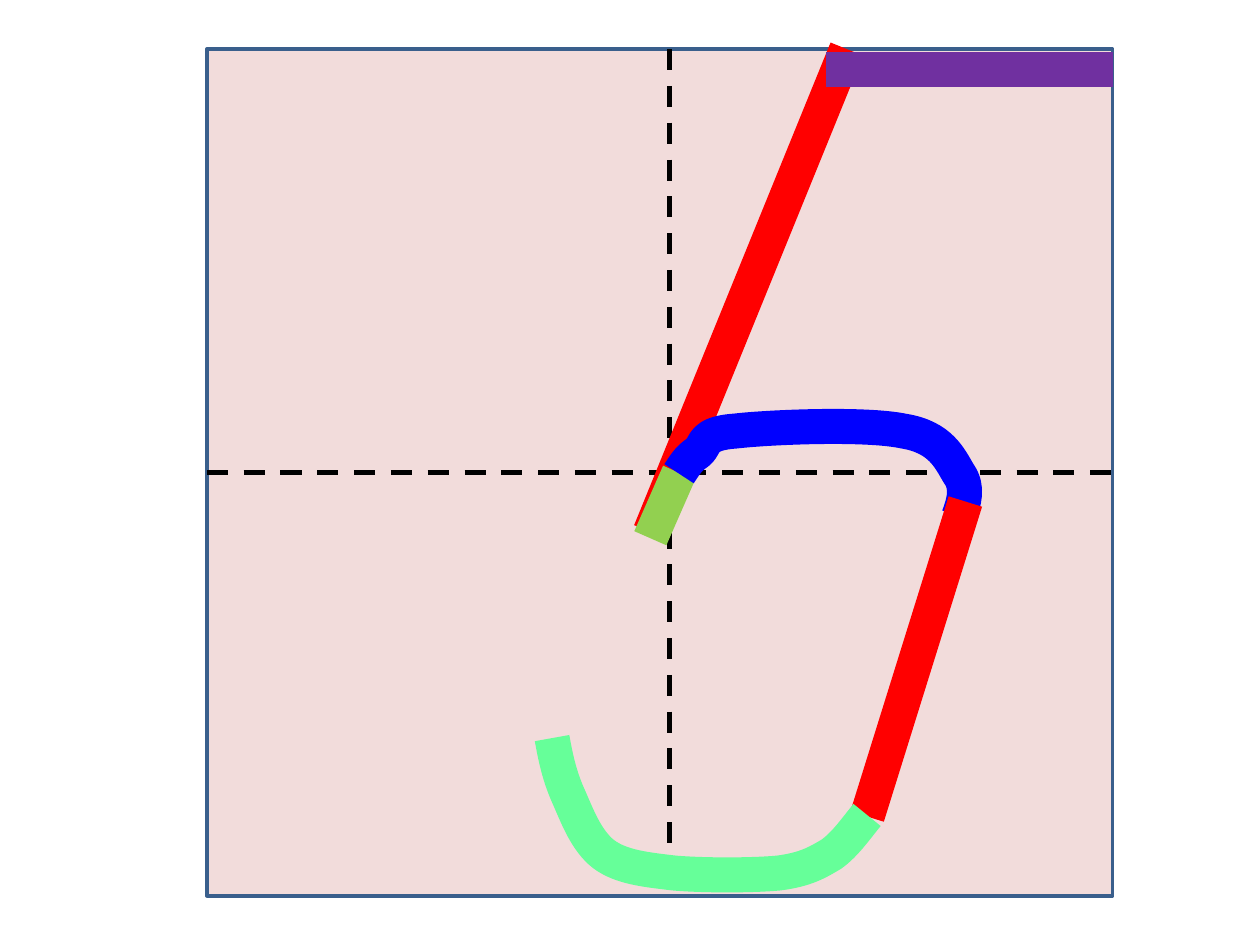
from lxml import etree
from pptx import Presentation
from pptx.dml.color import RGBColor
from pptx.enum.dml import MSO_LINE
from pptx.enum.shapes import MSO_CONNECTOR, MSO_SHAPE
from pptx.oxml.ns import qn
from pptx.util import Cm, Pt

STRAIGHT = MSO_CONNECTOR.STRAIGHT
RECT = MSO_SHAPE.RECTANGLE
DASH = MSO_LINE.DASH

COLORS = {
    "panel": "F2DCDB",
    "border": "3A5F8C",
    "guide": "000000",
    "slant": "FF0000",
    "retrace": "92D050",
    "bowl": "0000FF",
    "hook": "66FF99",
    "top": "7030A0",
}
STROKE = 20

# Start point, then two control points and an end point per curve (cm)
BOWL = [
    (13.69, 9.55),
    (13.79, 9.4), (13.87, 9.25), (14.07, 9.12),
    (14.25, 8.97), (14.12, 8.74), (14.83, 8.69),
    (15.52, 8.61), (17.45, 8.53), (18.21, 8.69),
    (18.97, 8.81), (19.15, 9.25), (19.33, 9.55),
    (19.53, 9.83), (19.43, 10.13), (19.33, 10.41),
]
HOOK = [
    (17.48, 16.43),
    (17.25, 16.71), (17.04, 17.02), (16.76, 17.22),
    (16.46, 17.4), (16.23, 17.53), (15.7, 17.6),
    (15.16, 17.65), (14.17, 17.65), (13.59, 17.6),
    (13, 17.53), (12.52, 17.48), (12.17, 17.22),
    (11.81, 16.94), (11.63, 16.43), (11.46, 16.05),
    (11.28, 15.65), (11.2, 15.27), (11.13, 14.88),
]


def style_line(shape, color, width):
    shape.line.color.rgb = RGBColor.from_string(COLORS[color])
    shape.line.width = Pt(width)


def add_panel(s, left, top, width, height):
    panel = s.shapes.add_shape(RECT, Cm(left), Cm(top), Cm(width), Cm(height))
    panel.shadow.inherit = False
    panel.fill.solid()
    panel.fill.fore_color.rgb = RGBColor.from_string(COLORS["panel"])
    style_line(panel, "border", 2)


def add_line(s, start, end, color, width=STROKE):
    points = [Cm(v) for v in (*start, *end)]
    line = s.shapes.add_connector(STRAIGHT, *points)
    style_line(line, color, width)
    etree.SubElement(line._element.spPr, qn("a:effectLst"))
    return line


def add_guide(s, start, end):
    add_line(s, start, end, "guide", 3).line.dash_style = DASH


def add_curve(s, points, color):
    """Draw a freeform and turn each three line segments into one Bezier."""
    start, *rest = [(Cm(x), Cm(y)) for x, y in points]
    builder = s.shapes.build_freeform(*start)
    builder.add_line_segments(rest, close=False)
    curve = builder.convert_to_shape()
    curve.shadow.inherit = False
    curve.fill.background()
    style_line(curve, color, STROKE)

    segments = list(curve._element.iter(qn("a:lnTo")))
    outline = segments[0].getparent()
    for i in range(0, len(segments), 3):
        bezier = etree.SubElement(outline, qn("a:cubicBezTo"))
        for segment in segments[i:i + 3]:
            bezier.append(segment[0])
            outline.remove(segment)


def main():
    prs = Presentation()
    prs.slide_width, prs.slide_height = Cm(25.4), Cm(19.05)
    s = prs.slides.add_slide(prs.slide_layouts[6])

    add_panel(s, 4.17, 0.99, 18.26, 17.07)
    add_guide(s, (4.17, 9.53), (22.63, 9.53))
    add_guide(s, (13.49, 0.99), (13.49, 17.86))
    add_line(s, (17.07, 0.99), (13.11, 10.72), "slant")
    add_line(s, (13.11, 10.85), (13.69, 9.53), "retrace")
    add_curve(s, BOWL, "bowl")
    add_line(s, (19.46, 10.11), (17.48, 16.46), "slant")
    add_curve(s, HOOK, "hook")
    add_line(s, (16.66, 1.4), (22.43, 1.4), "top")

    prs.save("out.pptx")


if __name__ == "__main__":
    main()
